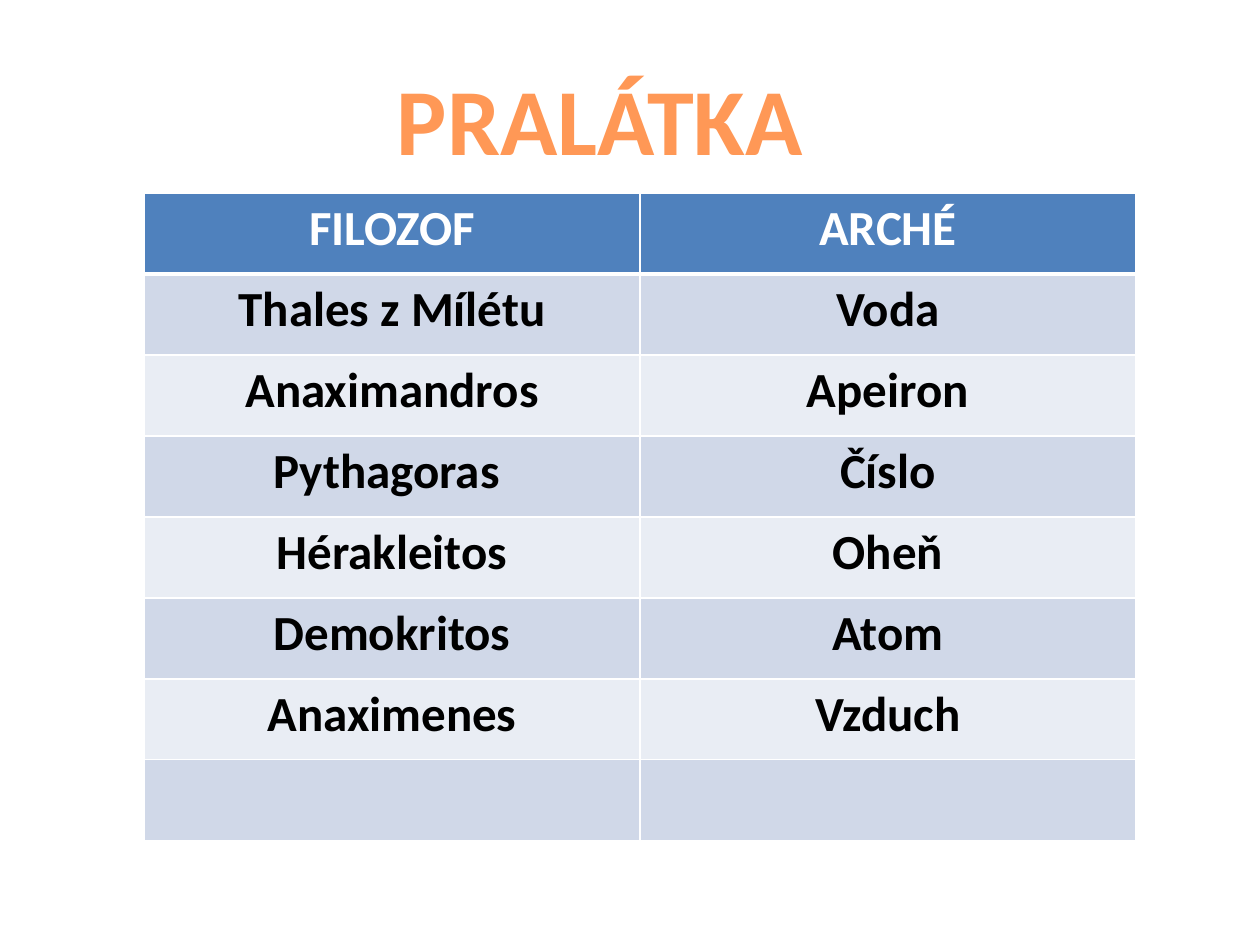
from dataclasses import dataclass

from lxml import etree
from pptx import Presentation
from pptx import util as u
from pptx.dml.color import RGBColor
from pptx.enum import text
from pptx.oxml import ns

PX = 914400 / 126

ROWS = [
    ("FILOZOF", "ARCHÉ"),
    ("Thales z Mílétu", "Voda"),
    ("Anaximandros", "Apeiron"),
    ("Pythagoras ", "Číslo"),
    ("Hérakleitos", "Oheň"),
    ("Demokritos", "Atom"),
    ("Anaximenes", "Vzduch"),
    ("", ""),
]


@dataclass(frozen=True)
class Theme:
    font: str = "Calibri"
    title_size: int = 54
    table_size: int = 28
    title: str = "FF9856"
    header_fill: str = "4F81BD"
    header_text: str = "FFFFFF"
    body_text: str = "000000"
    bands: tuple = ("D0D8E8", "E9EDF4")
    border: str = "FFFFFF"
    thin: int = 1
    thick: int = 3


def px(length):
    return u.Emu(round(length * PX))


def write(frame, content, *, font, size, color, bold=True,
          align=text.PP_ALIGN.CENTER):
    paragraph = frame.paragraphs[0]
    paragraph.alignment = align
    paragraph.font.size = u.Pt(size)
    if not content:
        return
    run = paragraph.add_run()
    run.text = content
    run.font.name = font
    run.font.size = u.Pt(size)
    run.font.bold = bold
    run.font.color.rgb = RGBColor.from_string(color)


def set_borders(cell, color, **widths):
    """Draw cell sides, given as L, R, T, B widths in points; call before filling."""
    properties = cell._tc.get_or_add_tcPr()
    for side, width in widths.items():
        line = etree.SubElement(properties, ns.qn(f"a:ln{side}"), w=str(u.Pt(width)))
        fill = etree.SubElement(line, ns.qn("a:solidFill"))
        etree.SubElement(fill, ns.qn("a:srgbClr"), val=color)


class SlideBuilder:
    def __init__(self, slide, theme):
        self.slide = slide
        self.theme = theme

    def title(self, content, left, top, width, height):
        theme = self.theme
        heading = self.slide.shapes.title
        heading.left, heading.top = px(left), px(top)
        heading.width, heading.height = px(width), px(height)
        frame = heading.text_frame
        frame.word_wrap = False
        frame.auto_size = text.MSO_AUTO_SIZE.SHAPE_TO_FIT_TEXT
        frame.vertical_anchor = text.MSO_ANCHOR.TOP
        write(frame, content, font=theme.font, size=theme.title_size,
              color=theme.title)

    def table(self, rows, left, top, column_width, row_height):
        theme = self.theme
        columns = len(rows[0])
        grid = self.slide.shapes.add_table(
            len(rows), columns, px(left), px(top),
            px(column_width * columns), px(row_height * len(rows))).table
        for column in grid.columns:
            column.width = px(column_width)
        for r, values in enumerate(rows):
            grid.rows[r].height = px(row_height)
            header = r == 0
            fill = theme.header_fill if header else theme.bands[(r - 1) % 2]
            color = theme.header_text if header else theme.body_text
            for c, value in enumerate(values):
                cell = grid.cell(r, c)
                set_borders(cell, theme.border, L=theme.thin, R=theme.thin,
                            T=theme.thick if r == 1 else theme.thin,
                            B=theme.thick if header else theme.thin)
                cell.fill.solid()
                cell.fill.fore_color.rgb = RGBColor.from_string(fill)
                write(cell.text_frame, value, font=theme.font,
                      size=theme.table_size, color=color)


def main():
    deck = Presentation()
    deck.slide_width, deck.slide_height = px(1260), px(945)
    title_only = deck.slide_layouts[5]
    builder = SlideBuilder(deck.slides.add_slide(title_only), Theme())
    builder.table(ROWS, left=144, top=193, column_width=496, row_height=81)
    builder.title("PRALÁTKA", left=382, top=55, width=436, height=127)
    deck.save("out.pptx")


if __name__ == "__main__":
    main()
